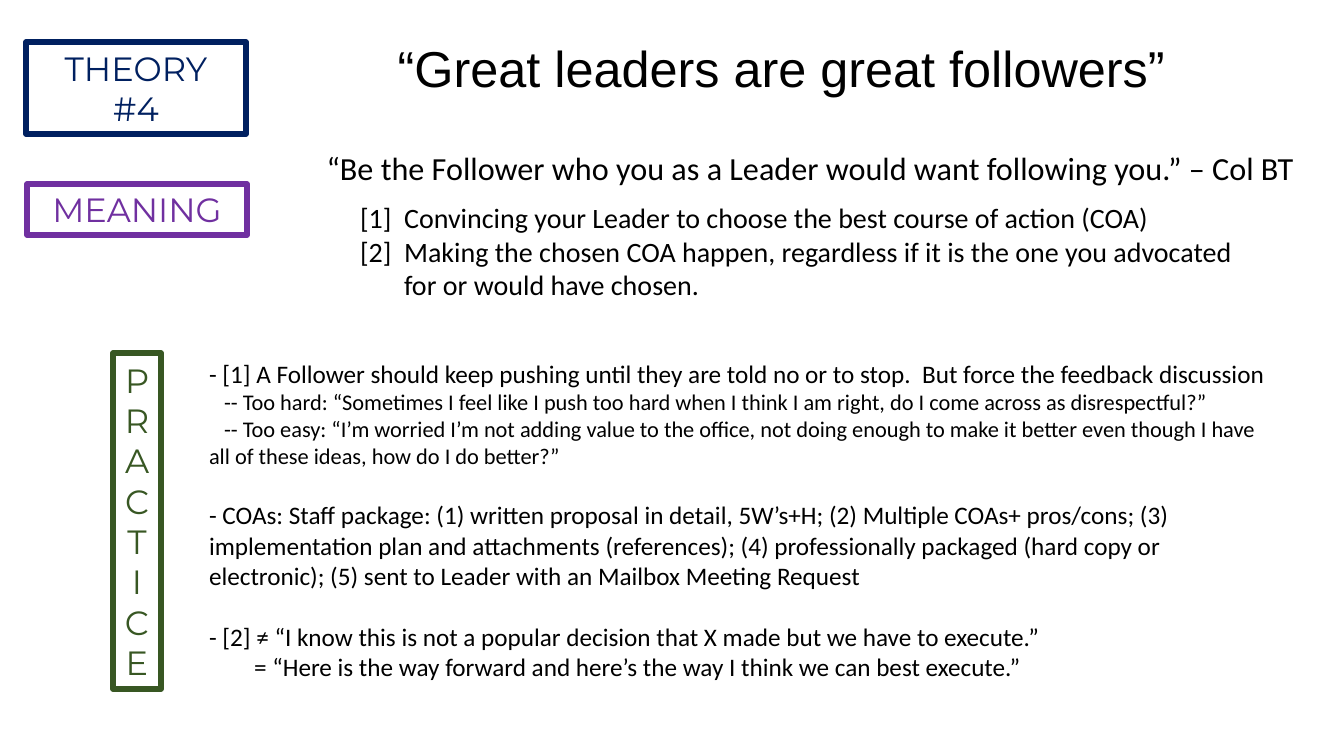
from lxml import etree
from pptx import Presentation
from pptx import util as u
from pptx.dml.color import RGBColor
from pptx.enum import shapes, text
from pptx.oxml.ns import qn

NAVY = RGBColor(0x00, 0x20, 0x60)
PURPLE = RGBColor(0x70, 0x30, 0xA0)
GREEN = RGBColor(0x38, 0x57, 0x23)
BLACK = RGBColor(0x00, 0x00, 0x00)
EMU_PER_PX = 914400 / 100.8
CENTER = text.PP_ALIGN.CENTER
LEFT = text.PP_ALIGN.LEFT

LABELS = [
    (["THEORY", "#4"], (26, 42, 220, 92), NAVY),
    (["MEANING"], (27, 184, 220, 51), PURPLE),
    (["PRACTICE"], (113, 353, 48, 336), GREEN),
]
MEANING = [
    ("“Be the Follower who you as a Leader would want following you.” – Col BT",
     dict(size=23, align=CENTER)),
    ("[1]\tConvincing your Leader to choose the best course of action (COA)",
     dict(size=20, before=10, left=88, first=-44)),
    ("[2]\tMaking the chosen COA happen, regardless if it is the one you advocated"
     "\vfor or would have chosen.",
     dict(size=20, left=88, first=-44)),
]
PRACTICE = [
    ("- [1] A Follower should keep pushing until they are told no or to stop.  "
     "But force the feedback discussion", dict(size=18)),
    ("-- Too hard: “Sometimes I feel like I push too hard when I think I am right, "
     "do I come across as disrespectful?”", dict(size=16, first=15)),
    ("-- Too easy: “I’m worried I’m not adding value to the office, not doing enough "
     "to make it better even though I have all of these ideas, how do I do better?”",
     dict(size=16, first=15)),
    ("- COAs: Staff package: (1) written proposal in detail, 5W’s+H; (2) Multiple COAs+ "
     "pros/cons; (3) implementation plan and attachments (references); (4) professionally "
     "packaged (hard copy or electronic); (5) sent to Leader with an Mailbox Meeting Request",
     dict(size=18, before=22)),
    ("- [2] ≠ “I know this is not a popular decision that X made but we have to execute.”",
     dict(size=18, before=22)),
    ("= “Here is the way forward and here’s the way I think we can best execute.”",
     dict(size=18, first=45)),
]


def px(n):
    return u.Emu(round(n * EMU_PER_PX))


def write(tf, content, size, font="Calibri", color=BLACK, align=LEFT,
          before=0, left=0, first=0):
    """Add one unbulleted paragraph, filling the empty first one if there is one."""
    p = tf.paragraphs[0]
    if p.text:
        p = tf.add_paragraph()
    p.text = content
    p.alignment = align
    p.space_before = u.Pt(before)
    p.font.size = u.Pt(size)
    for r in p.runs:
        r.font.name = font
        r.font.size = u.Pt(size)
        r.font.color.rgb = color
    pPr = p._p.get_or_add_pPr()
    pPr.set("marL", str(px(left)))
    pPr.set("indent", str(px(first)))
    bullet = etree.Element(qn("a:buNone"))
    pPr.find(qn("a:spcBef")).addnext(bullet)


def place(sp, box):
    """Move a placeholder and let its text start at the top."""
    sp.left, sp.top, sp.width, sp.height = map(px, box)
    tf = sp.text_frame
    tf.word_wrap = True
    tf.auto_size = text.MSO_AUTO_SIZE.NONE
    tf.vertical_anchor = text.MSO_ANCHOR.TOP
    return tf


def add_label(s, lines, box, color):
    sp = s.shapes.add_shape(shapes.MSO_SHAPE.RECTANGLE, *map(px, box))
    sp.shadow.inherit = False
    sp.fill.background()
    sp.line.color.rgb = color
    sp.line.width = u.Pt(4)
    sp.text_frame.word_wrap = True
    for line in lines:
        write(sp.text_frame, line, 24, font="Montserrat", color=color, align=CENTER)


def fill_list(sp, box, items):
    tf = place(sp, box)
    for content, style in items:
        write(tf, content, **style)


def main():
    prs = Presentation()
    prs.slide_width, prs.slide_height = px(1344), px(756)
    s = prs.slides.add_slide(prs.slide_layouts.get_by_name("Two Content"))
    title, meaning, practice = s.placeholders
    write(place(title, (325, 32, 927, 72)), "“Great leaders are great followers” ",
          36, font="Arial", align=CENTER)
    fill_list(meaning, (306, 143, 1010, 188), MEANING)
    fill_list(practice, (199, 353, 1081, 336), PRACTICE)
    for lines, box, color in LABELS:
        add_label(s, lines, box, color)
    prs.save("out.pptx")


if __name__ == "__main__":
    main()
